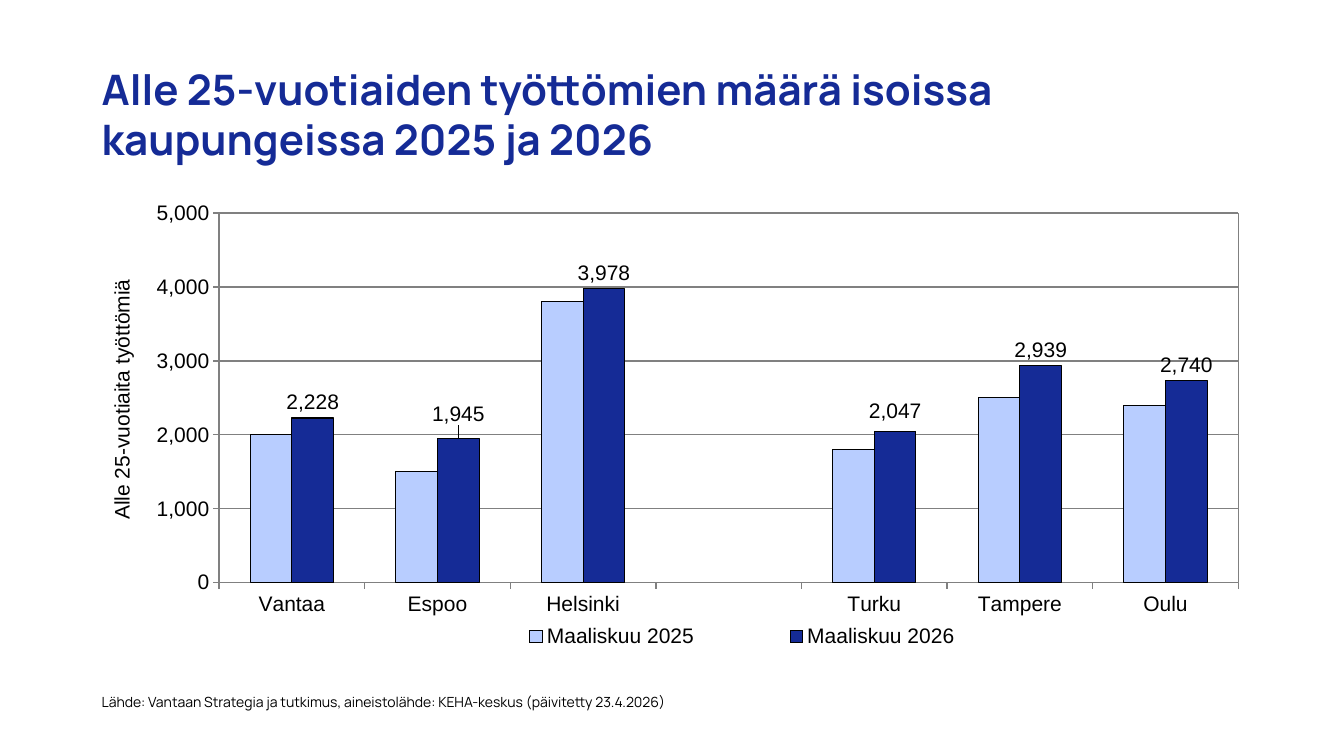
import pptx
import pptx.chart.data
import pptx.dml.color
import pptx.enum.chart
import pptx.enum.text
import pptx.oxml
import pptx.oxml.ns
import pptx.util
from pptx.util import Inches

NAVY = "152B96"
LIGHT_BLUE = "B8CDFF"
BLACK = "000000"
GRAY = "808080"


def color(value):
    return pptx.dml.color.RGBColor.from_string(value)


class SlideBuilder:
    text_font = "Manrope"
    chart_font = "Arial"
    chart_size = 15

    def __init__(self, slide):
        self.slide = slide

    def set_font(self, font, name, size, value, bold=False):
        font.name = name
        font.size = pptx.util.Pt(size)
        font.bold = bold
        font.color.rgb = color(value)

    def text(self, wording, left, top, width, height, size, value,
             bold=False, anchor="TOP"):
        shape = self.slide.shapes.add_textbox(
            Inches(left), Inches(top), Inches(width), Inches(height))
        frame = shape.text_frame
        frame.word_wrap = True
        frame.vertical_anchor = pptx.enum.text.MSO_ANCHOR[anchor]
        paragraph = frame.paragraphs[0]
        paragraph.text = wording
        self.set_font(paragraph.font, self.text_font, size, value, bold)

    def place(self, parent, index, values, mode="edge", inner=False):
        for layout in parent.findall(pptx.oxml.ns.qn("c:layout")):
            parent.remove(layout)
        target = '<c:layoutTarget val="inner"/>' if inner else ""
        lengths = "".join(f'<c:{key} val="{value}"/>' for key, value in zip("xywh", values))
        parent.insert(index, pptx.oxml.parse_xml(
            f'<c:layout {pptx.oxml.ns.nsdecls("c")}><c:manualLayout>{target}'
            f'<c:xMode val="{mode}"/><c:yMode val="{mode}"/>{lengths}'
            '</c:manualLayout></c:layout>'))

    def axis(self, axis):
        axis.major_tick_mark = pptx.enum.chart.XL_TICK_MARK.OUTSIDE
        axis.minor_tick_mark = pptx.enum.chart.XL_TICK_MARK.NONE
        axis.format.line.color.rgb = color(GRAY)
        axis.format.line.width = pptx.util.Pt(1)

    def value_labels(self, series, raised_labels):
        position = pptx.enum.chart.XL_LABEL_POSITION.OUTSIDE_END
        labels = series.data_labels
        labels.show_value = True
        labels.position = position
        labels.number_format = "#,##0"
        labels.number_format_is_linked = False
        for index, offset in raised_labels.items():
            series.points[index].data_label.position = position
            label = series._element.xpath(f'c:dLbls/c:dLbl[c:idx/@val="{index}"]')[0]
            self.place(label, 1, (0, offset), mode="factor")

    def column_chart(self, categories, columns, raised_labels, axis_title,
                     left, top, width, height):
        data = pptx.chart.data.CategoryChartData(number_format="#,##0")
        data.categories = categories
        for name, values, fill in columns:
            data.add_series(name, values)
        chart = self.slide.shapes.add_chart(
            pptx.enum.chart.XL_CHART_TYPE.COLUMN_CLUSTERED,
            Inches(left), Inches(top), Inches(width), Inches(height), data).chart
        self.set_font(chart.font, self.chart_font, self.chart_size, BLACK)
        chart.has_title = False

        plot = chart.plots[0]
        plot.gap_width = 150
        plot.overlap = 0
        plot.vary_by_categories = False
        for series, (name, values, fill) in zip(plot.series, columns):
            series.format.fill.solid()
            series.format.fill.fore_color.rgb = color(fill)
            series.format.line.color.rgb = color(BLACK)
            series.format.line.width = pptx.util.Pt(0.75)
        self.value_labels(plot.series[-1], raised_labels)

        self.axis(chart.category_axis)
        value_axis = chart.value_axis
        self.axis(value_axis)
        value_axis.minimum_scale = 0
        value_axis.maximum_scale = 5000
        value_axis.major_unit = 1000
        value_axis.tick_labels.number_format = "#,##0"
        value_axis.tick_labels.number_format_is_linked = False
        value_axis.major_gridlines.format.line.color.rgb = color(GRAY)
        value_axis.major_gridlines.format.line.width = pptx.util.Pt(1)
        title = value_axis.axis_title
        paragraph = title.text_frame.paragraphs[0]
        paragraph.text = axis_title
        self.set_font(paragraph.font, self.chart_font, self.chart_size, BLACK)
        self.place(title._element, 1, (0.01, 0.17))

        chart.has_legend = True
        chart.legend.position = pptx.enum.chart.XL_LEGEND_POSITION.BOTTOM
        chart.legend.include_in_layout = False
        self.place(chart.legend._element, 1, (0.3, 0.92, 0.52, 0.07))
        plot_area = chart._chartSpace.chart.plotArea
        self.place(plot_area, 0, (0.109, 0.034, 0.879, 0.804), inner=True)
        plot_area.append(pptx.oxml.parse_xml(
            f'<c:spPr {pptx.oxml.ns.nsdecls("c", "a")}><a:noFill/>'
            f'<a:ln w="9525"><a:solidFill><a:srgbClr val="{GRAY}"/>'
            '</a:solidFill></a:ln></c:spPr>'))


def main():
    presentation = pptx.Presentation()
    presentation.slide_width = Inches(13.33)
    presentation.slide_height = Inches(7.5)
    slide = presentation.slides.add_slide(presentation.slide_layouts[6])
    builder = SlideBuilder(slide)
    builder.text("Alle 25-vuotiaiden työttömien määrä isoissa kaupungeissa 2025 ja 2026",
                 0.91, 0.4, 11.5, 1.45, 30, NAVY, bold=True, anchor="MIDDLE")
    builder.text("Lähde: Vantaan Strategia ja tutkimus, aineistolähde: "
                 "KEHA-keskus (päivitetty 23.4.2026)",
                 0.91, 6.83, 6.32, 0.4, 10, BLACK)
    builder.column_chart(
        ["Vantaa", "Espoo", "Helsinki", "", "Turku", "Tampere", "Oulu"],
        [("Maaliskuu 2025", [2000, 1500, 3800, None, 1800, 2500, 2400], LIGHT_BLUE),
         ("Maaliskuu 2026", [2228, 1945, 3978, None, 2047, 2939, 2740], NAVY)],
        {1: -0.02, 4: -0.01},
        "Alle 25-vuotiaita työttömiä", 0.92, 1.96, 11.5, 4.56)
    presentation.save("out.pptx")


if __name__ == "__main__":
    main()
